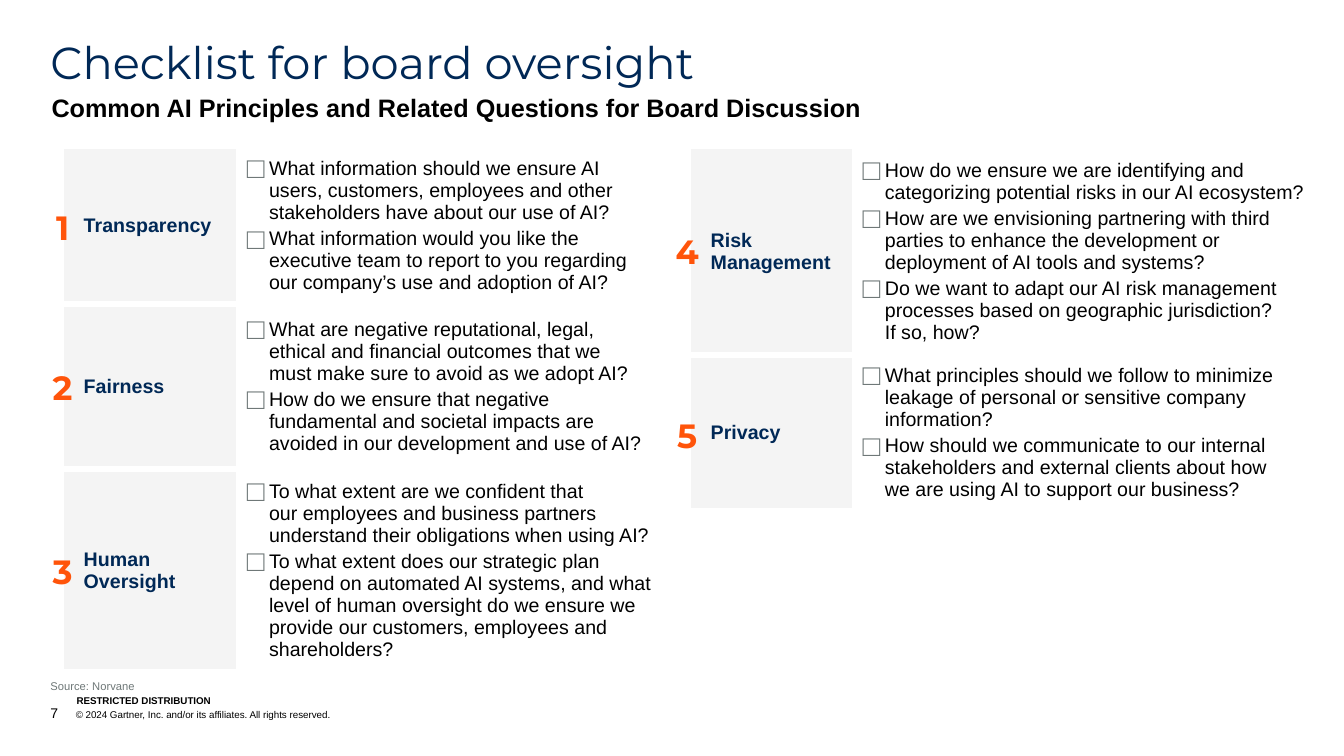
from lxml import etree
from pptx import Presentation
from pptx.dml.color import RGBColor
from pptx.enum.text import MSO_ANCHOR, PP_ALIGN
from pptx.oxml.ns import qn
from pptx.util import Cm, Pt

TOP, MIDDLE, BOTTOM = MSO_ANCHOR.TOP, MSO_ANCHOR.MIDDLE, MSO_ANCHOR.BOTTOM
LEFT, CENTER = PP_ALIGN.LEFT, PP_ALIGN.CENTER
COLORS = {
    "navy": "002856", "black": "000000", "grey": "6F7878",
    "orange": "FF540A", "panel": "F4F4F4", "white": "FFFFFF",
}
TABLE_TOP = 3.73
THIN, THICK = 0.13, 0.25
LEFT_ROWS = [
    ("Transparency", 3.68, THIN, [
        "What information should we ensure AI users, customers, employees and other stakeholders have about our use of AI?",
        "What information would you like the executive team to report to you regarding our company’s use and adoption of AI?",
    ]),
    ("Fairness", 3.94, THICK, [
        "What are negative reputational, legal, \nethical and financial outcomes that we \nmust make sure to avoid as we adopt AI?",
        "How do we ensure that negative fundamental and societal impacts are avoided in our development and use of AI?",
    ]),
    ("Human Oversight", 4.9, THIN, [
        "To what extent are we confident that \nour employees and business partners understand their obligations when using AI?",
        "To what extent does our strategic plan depend on automated AI systems, and what level of human oversight do we ensure we provide our customers, employees and shareholders?",
    ]),
]
RIGHT_ROWS = [
    ("Risk Management", 4.9, THIN, [
        "How do we ensure we are identifying and categorizing potential risks in our AI ecosystem?",
        "How are we envisioning partnering with third parties to enhance the development or deployment of AI tools and systems?",
        "Do we want to adapt our AI risk management processes based on geographic jurisdiction? \nIf so, how?",
    ]),
    ("Privacy", 3.76, THIN, [
        "What principles should we follow to minimize leakage of personal or sensitive company information?",
        "How should we communicate to our internal stakeholders and external clients about how \nwe are using AI to support our business?",
    ]),
]
NUMBERS = [("1", 0.03, 5.21), ("2", 0.03, 9.25), ("3", 0.03, 13.87),
           ("4", 15.77, 5.82), ("5", 15.77, 10.44)]


def rgb(name):
    """Return the named colour."""
    return RGBColor.from_string(COLORS[name])


def add_run(p, text, size, color="black", bold=False, font="Arial"):
    """Add one formatted run to a paragraph."""
    r = p.add_run()
    r.text = text
    r.font.size = Pt(size)
    r.font.name = font
    r.font.bold = bold
    r.font.color.rgb = rgb(color)


def add_text(s, x, y, w, h, anchor=TOP, align=LEFT, spacing=None):
    """Add an empty text box without insets and return its paragraph."""
    tf = s.shapes.add_textbox(Cm(x), Cm(y), Cm(w), Cm(h)).text_frame
    tf.word_wrap = True
    tf.margin_left = tf.margin_right = tf.margin_top = tf.margin_bottom = 0
    tf.vertical_anchor = anchor
    p = tf.paragraphs[0]
    p.alignment = align
    if spacing:
        p.line_spacing = spacing
    return p


def set_indent(p, width):
    """Give a paragraph a hanging indent."""
    pPr = p._p.get_or_add_pPr()
    pPr.set("marL", str(Cm(width)))
    pPr.set("indent", str(-Cm(width)))
    return pPr


def add_checkbox(p):
    """Give a paragraph an open square as its bullet."""
    pPr = set_indent(p, 0.56)
    color = etree.SubElement(pPr, qn("a:buClr"))
    etree.SubElement(color, qn("a:srgbClr"), val=COLORS["grey"])
    etree.SubElement(pPr, qn("a:buSzPct"), val="150000")
    etree.SubElement(pPr, qn("a:buFont"), typeface="Arial")
    etree.SubElement(pPr, qn("a:buChar"), char="□")


def style_cell(cell, fill, left, right, pad, sides):
    """Set the fill, margins, anchor and white borders of a cell."""
    cell.fill.solid()
    cell.fill.fore_color.rgb = rgb(fill)
    cell.margin_left, cell.margin_right = Cm(left), Cm(right)
    cell.margin_top = cell.margin_bottom = Cm(pad)
    cell.vertical_anchor = MIDDLE
    tcPr = cell._tc.get_or_add_tcPr()
    for i, side in enumerate(sides):
        ln = etree.Element(qn("a:ln" + side), w=str(Pt(4.5)))
        solid = etree.SubElement(ln, qn("a:solidFill"))
        etree.SubElement(solid, qn("a:srgbClr"), val=COLORS["white"])
        tcPr.insert(i, ln)


def add_questions(tf, questions):
    """Write the questions as a list of checkboxes."""
    for i, question in enumerate(questions):
        p = tf.add_paragraph() if i else tf.paragraphs[0]
        add_checkbox(p)
        if i:
            p.space_before = Pt(3)
        for j, line in enumerate(question.split("\n")):
            if j:
                p.add_line_break()
            add_run(p, line, 14)


def add_principles(s, x, widths, rows, right):
    """Add a table of principles with their questions."""
    height = sum(row[1] for row in rows)
    table = s.shapes.add_table(len(rows), 2, Cm(x), Cm(TABLE_TOP),
                               Cm(sum(widths)), Cm(height)).table
    table.first_row = table.horz_banding = False
    for column, width in zip(table.columns, widths):
        column.width = Cm(width)
    for i, (name, row_height, pad, questions) in enumerate(rows):
        table.rows[i].height = Cm(row_height)
        label, body = table.cell(i, 0), table.cell(i, 1)
        sides = "TB" if i else "B"
        style_cell(label, "panel", 0.51, 0.25, pad, sides)
        style_cell(body, "white", 0.25, right, pad, sides)
        add_run(label.text_frame.paragraphs[0], name, 14, "navy", True)
        add_questions(body.text_frame, questions)


def add_footer(s):
    """Add the source, distribution note, page number and copyright."""
    p = add_text(s, 1.27, 17.09, 20.19, 0.36, BOTTOM)
    add_run(p, "Source: Norvane", 8, "grey")
    p = add_text(s, 1.93, 17.5, 6.43, 0.3, BOTTOM)
    add_run(p, "RESTRICTED DISTRIBUTION", 7, bold=True)
    p = add_text(s, 1.27, 17.75, 20.29, 0.43, BOTTOM)
    set_indent(p, 0.64)
    add_run(p, "7", 10)
    add_run(p, "\t© 2024 Gartner, Inc. and/or its affiliates. All rights reserved.", 7)


def main():
    """Build the slide and save it."""
    prs = Presentation()
    prs.slide_width, prs.slide_height = Cm(33.87), Cm(19.05)
    s = prs.slides.add_slide(prs.slide_layouts[6])
    p = add_text(s, 1.27, 1.02, 31.32, 1.24, spacing=0.9)
    add_run(p, "Checklist for board oversight", 32, "navy", font="Montserrat")
    p = add_text(s, 1.3, 2.41, 31.29, 0.69, spacing=0.9)
    add_run(p, "Common AI Principles and Related Questions for Board Discussion", 18, bold=True)
    add_principles(s, 1.6, (4.37, 10.59), LEFT_ROWS, 0)
    add_principles(s, 17.4, (4.09, 11.86), RIGHT_ROWS, 0.25)
    for number, x, y in NUMBERS:
        p = add_text(s, x, y, 3.1, 1.02, MIDDLE, CENTER)
        add_run(p, number, 24, "orange", True, "Montserrat")
    add_footer(s)
    prs.save("out.pptx")


if __name__ == "__main__":
    main()
